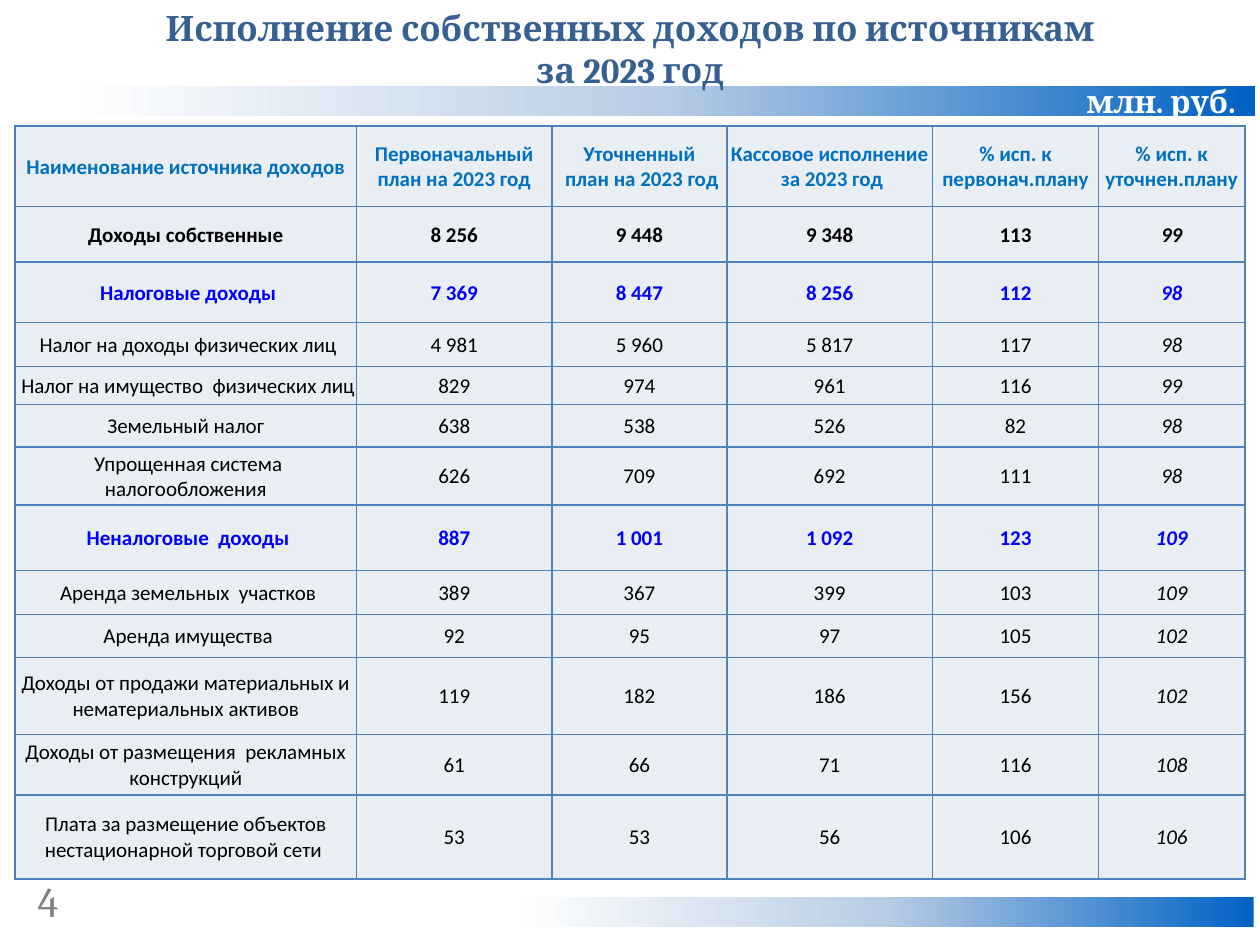
from copy import deepcopy

from lxml import etree
from pptx import Presentation
from pptx import util as u
from pptx.dml.color import RGBColor
from pptx.enum import shapes, text
from pptx.oxml.ns import qn

HEADING_FONT, TABLE_FONT = "Cambria", "Calibri"
HEADER_BLUE, GROUP_BLUE, BLACK = "0070C0", "0000FF", "000000"
CELL_FILL, BORDER = "E9EDF4", "4F81BD"
BAR_GRADIENT = [(0, "0062C4"), (0.5, "B9CDE5"), (1, "FFFFFF")]

COLUMN_WIDTHS = [2.71, 1.55, 1.39, 1.63, 1.32, 1.16]
ROW_HEIGHTS = [0.64, 0.44, 0.48, 0.35, 0.3, 0.34, 0.46,
               0.52, 0.35, 0.34, 0.61, 0.48, 0.67]
HEADERS = ["Наименование источника доходов", "Первоначальный план на 2023 год",
           "Уточненный\n план на 2023 год", "Кассовое исполнение\n за 2023 год",
           "% исп. к первонач.плану", "% исп. к уточнен.плану"]
# Source, initial plan, revised plan, cash execution, % of each plan
INCOME = [
    ["Доходы собственные", "8 256", "9 448", "9 348", "113", "99"],
    [" Налоговые доходы", "7 369", "8 447", "8 256", "112", "98"],
    [" Налог на доходы физических лиц", "4 981", "5 960", "5 817", "117", "98"],
    [" Налог на имущество  физических лиц", "829", "974", "961", "116", "99"],
    [" Земельный налог ", "638", "538", "526", "82", "98"],
    [" Упрощенная система налогообложения", "626", "709", "692", "111", "98"],
    [" Неналоговые  доходы", "887", "1 001", "1 092", "123", "109"],
    [" Аренда земельных  участков", "389", "367", "399", "103", "109"],
    [" Аренда имущества", "92", "95", "97", "105", "102"],
    ["Доходы от продажи материальных и нематериальных активов",
     "119", "182", "186", "156", "102"],
    [" Доходы от размещения  рекламных  конструкций", "61", "66", "71", "116", "108"],
    ["Плата за размещение объектов нестационарной торговой сети ",
     "53", "53", "56", "106", "106"],
]
# Colours of the bold rows; all other rows are plain black
BOLD_ROWS = {0: HEADER_BLUE, 1: BLACK, 2: GROUP_BLUE, 7: GROUP_BLUE}


def color(value):
    return RGBColor.from_string(value)


def add_run(paragraph, words, size, font, fill, bold=False, italic=False):
    run = paragraph.add_run()
    run.text = words
    run.font.size = u.Pt(size)
    run.font.name = font
    run.font.color.rgb = color(fill)
    run.font.bold = bold
    run.font.italic = italic


def add_gradient_bar(slide, left, top, width, height):
    bar = slide.shapes.add_shape(shapes.MSO_SHAPE.RECTANGLE, u.Inches(left),
                                 u.Inches(top), u.Inches(width), u.Inches(height))
    bar.shadow.inherit = False
    bar.line.fill.background()
    bar.fill.gradient()
    bar.fill.gradient_angle = 180
    # A third stop is needed between the two default ones
    stop_list = bar._element.spPr.find(".//" + qn("a:gsLst"))
    stop_list.insert(1, deepcopy(stop_list[0]))
    for stop, (position, value) in zip(bar.fill.gradient_stops, BAR_GRADIENT):
        stop.position = position
        stop.color.rgb = color(value)
    return bar


def add_title(slide):
    title = slide.shapes.title
    title.left, title.top = u.Inches(0), u.Inches(0)
    title.width, title.height = u.Inches(10), u.Inches(0.77)
    frame = title.text_frame
    frame.vertical_anchor = text.MSO_ANCHOR.TOP
    frame.auto_size = text.MSO_AUTO_SIZE.NONE
    paragraph = frame.paragraphs[0]
    paragraph.alignment = text.PP_ALIGN.CENTER
    style = (20, HEADING_FONT, "376092", True)
    add_run(paragraph, "Исполнение собственных доходов по источникам", *style)
    paragraph.add_line_break()
    add_run(paragraph, "за 2023 год", *style)
    # The title lies over the upper bar
    slide.shapes._spTree.append(title._element)


def add_page_number(slide, number):
    box = slide.shapes.add_textbox(u.Inches(0.2), u.Inches(6.9),
                                   u.Inches(0.46), u.Inches(0.5))
    box.text_frame.word_wrap = True
    add_run(box.text_frame.paragraphs[0], number, 24, HEADING_FONT, "808080")


def set_borders(cell):
    properties = cell._tc.get_or_add_tcPr()
    for side in ("a:lnL", "a:lnR", "a:lnT", "a:lnB"):
        line = etree.SubElement(properties, qn(side), w=str(u.Pt(1)))
        fill = etree.SubElement(line, qn("a:solidFill"))
        etree.SubElement(fill, qn("a:srgbClr"), val=BORDER)


def fill_cell(cell, words, fill, bold, italic):
    set_borders(cell)
    cell.fill.solid()
    cell.fill.fore_color.rgb = color(CELL_FILL)
    cell.vertical_anchor = text.MSO_ANCHOR.MIDDLE
    cell.margin_left = cell.margin_right = cell.margin_top = u.Inches(0.01)
    cell.margin_bottom = 0
    frame = cell.text_frame
    for index, line in enumerate(words.split("\n")):
        paragraph = frame.add_paragraph() if index else frame.paragraphs[0]
        paragraph.alignment = text.PP_ALIGN.CENTER
        add_run(paragraph, line, 12, TABLE_FONT, fill, bold, italic)


def add_income_table(slide):
    rows = [HEADERS] + INCOME
    table = slide.shapes.add_table(
        len(rows), len(HEADERS), u.Inches(0.12), u.Inches(1),
        u.Inches(sum(COLUMN_WIDTHS)), u.Inches(sum(ROW_HEIGHTS))).table
    for column, width in zip(table.columns, COLUMN_WIDTHS):
        column.width = u.Inches(width)
    for row, height in zip(table.rows, ROW_HEIGHTS):
        row.height = u.Inches(height)
    last_column = len(HEADERS) - 1
    for r, row in enumerate(rows):
        for c, words in enumerate(row):
            fill_cell(table.cell(r, c), words, BOLD_ROWS.get(r, BLACK),
                      bold=r in BOLD_ROWS, italic=r > 0 and c == last_column)


def main():
    presentation = Presentation()
    presentation.slide_width = u.Inches(10)
    presentation.slide_height = u.Inches(7.5)
    slide = presentation.slides.add_slide(presentation.slide_layouts[5])

    # Upper bar with the unit of measure, lower bar with the page number
    upper_bar = add_gradient_bar(slide, 0.51, 0.68, 9.45, 0.24)
    upper_bar.text_frame.vertical_anchor = text.MSO_ANCHOR.MIDDLE
    unit = upper_bar.text_frame.paragraphs[0]
    unit.alignment = text.PP_ALIGN.RIGHT
    add_run(unit, "млн. руб. ", 18, HEADING_FONT, "FFFFFF", bold=True)
    add_gradient_bar(slide, 4.08, 7.12, 5.87, 0.24)
    add_page_number(slide, "4")

    # Heading and figures
    add_title(slide)
    add_income_table(slide)
    presentation.save("out.pptx")


if __name__ == "__main__":
    main()
